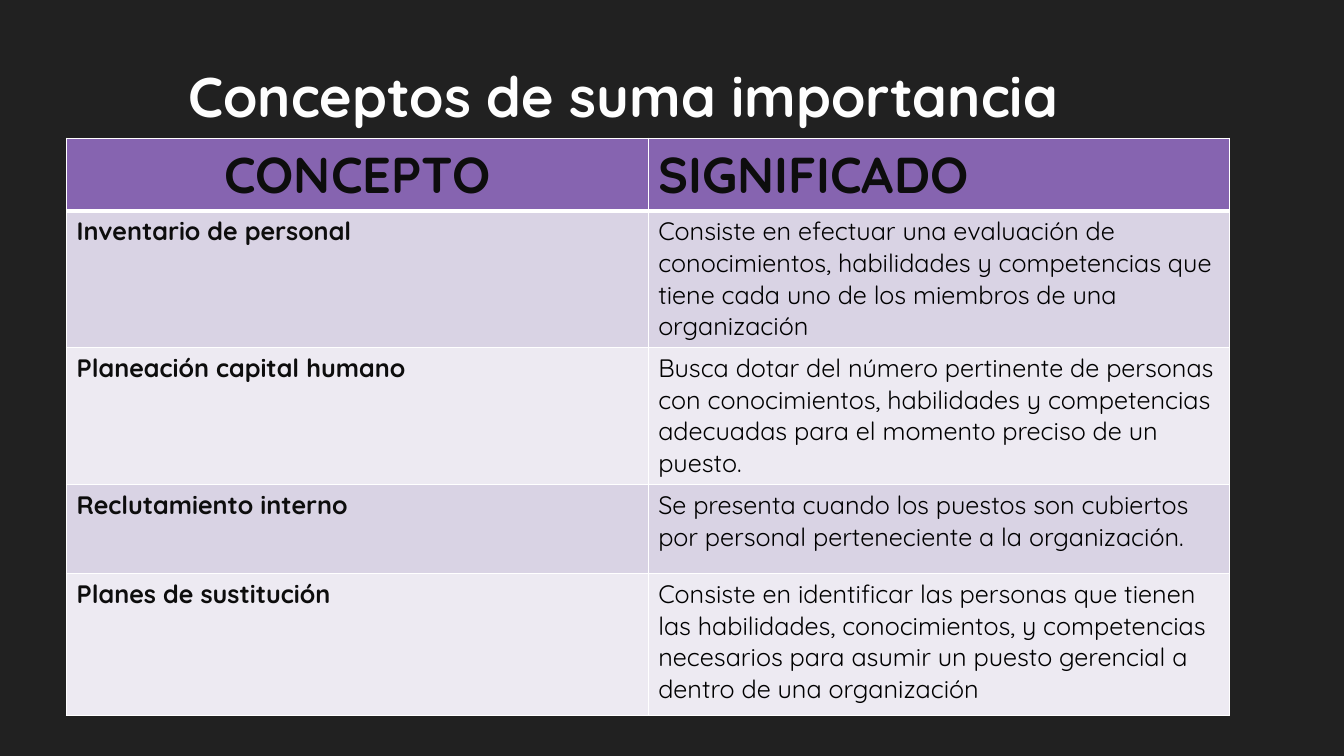
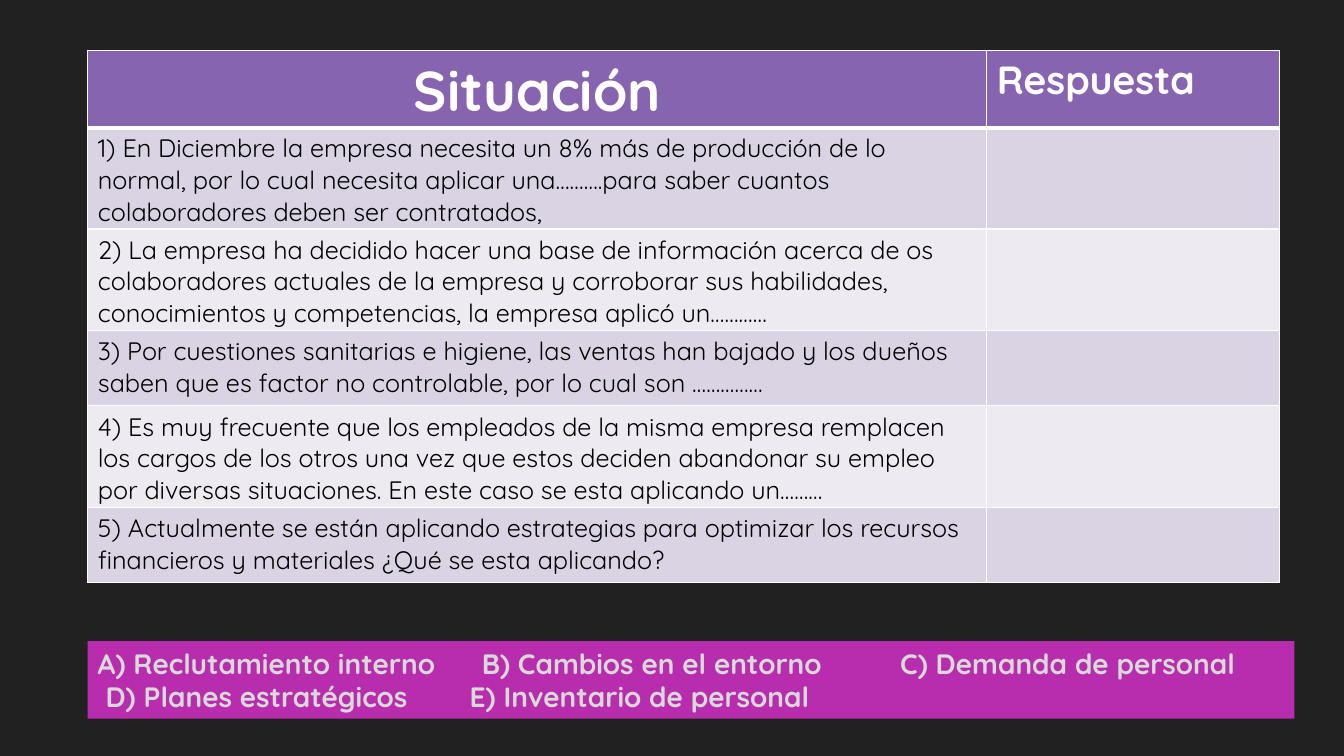
import pptx
import pptx.util
import pptx.dml.color
import pptx.enum.shapes
import pptx.enum.text
import pptx.oxml.ns
import lxml.etree

RGB = pptx.dml.color.RGBColor
ALIGN = pptx.enum.text.PP_ALIGN
ANCHOR = pptx.enum.text.MSO_ANCHOR
qn = pptx.oxml.ns.qn

DARK = RGB(0x21, 0x21, 0x21)
PURPLE = RGB(0x86, 0x64, 0xB0)
BANDS = (RGB(0xD9, 0xD3, 0xE4), RGB(0xED, 0xEA, 0xF2))
MAGENTA = RGB(0xB8, 0x2D, 0xAD)
WHITE = RGB(0xFF, 0xFF, 0xFF)
CREAM = RGB(0xFE, 0xFE, 0xFE)
GREY = RGB(0xD9, 0xD9, 0xD9)
INK = RGB(0x0D, 0x0D, 0x0D)
BLACK = RGB(0, 0, 0)
FONT = "Quicksand"
WIDTH = pptx.util.Inches(13.33)
HEIGHT = pptx.util.Inches(7.5)
THIN, THICK = 1, 3

TERMS = [
    ("CONCEPTO", "SIGNIFICADO"),
    ("Inventario de personal",
     "Consiste en efectuar una evaluación de conocimientos, habilidades y "
     "competencias que tiene cada uno de los miembros de una organización"),
    ("Planeación capital humano",
     "Busca dotar del número pertinente de personas con conocimientos, "
     "habilidades y competencias adecuadas para el momento preciso de un puesto."),
    ("Reclutamiento interno",
     "Se presenta cuando los puestos son cubiertos por personal "
     "perteneciente a la organización."),
    ("Planes de sustitución",
     "Consiste en identificar las personas que tienen las habilidades, "
     "conocimientos, y competencias necesarios para asumir un puesto gerencial "
     "a dentro de una organización"),
]
CASES = [
    ("Situación", "Respuesta"),
    ("1) En Diciembre la empresa necesita un 8% más de producción de lo normal, "
     "por lo cual necesita aplicar una……….para saber cuantos colaboradores "
     "deben ser contratados,", ""),
    ("2) La empresa ha decidido hacer una base de información acerca de os "
     "colaboradores actuales de la empresa y corroborar sus habilidades, "
     "conocimientos y competencias, la empresa aplicó un…………", ""),
    ("3) Por cuestiones sanitarias e higiene, las ventas han bajado y los dueños "
     "saben que es factor no controlable, por lo cual son ……………", ""),
    ("4) Es muy frecuente que los empleados de la misma empresa remplacen los "
     "cargos de los otros una vez que estos deciden abandonar su empleo por "
     "diversas situaciones. En este caso se esta aplicando un………", ""),
    ("5) Actualmente se están aplicando estrategias para optimizar los recursos "
     "financieros y materiales ¿Qué se esta aplicando?", ""),
]
CHOICES = [
    (0, (3.81, 7.96), ("A) Reclutamiento interno", "B) Cambios en el entorno",
                       "C) Demanda de personal")),
    (0.08, (3.61,), ("D) Planes estratégicos", "E) Inventario de personal")),
]


def across(share):
    return int(WIDTH * share / 100)


def down(share):
    return int(HEIGHT * share / 100)


def place(left, top, width, height):
    return across(left), down(top), across(width), down(height)


def style(frame, size, color, bold):
    for para in frame.paragraphs:
        for run in para.runs:
            font = run.font
            font.size = pptx.util.Pt(size)
            font.name = FONT
            font.bold = bold
            font.color.rgb = color


def add_slide(deck):
    slide = deck.slides.add_slide(deck.slide_layouts[6])
    slide.background.fill.solid()
    slide.background.fill.fore_color.rgb = DARK
    return slide


def add_glow(run):
    props = run.font._element
    effects = lxml.etree.Element(qn("a:effectLst"))
    shade = lxml.etree.SubElement(effects, qn("a:outerShdw"),
                                  blurRad="38100", dist="38100", dir="2700000")
    black = lxml.etree.SubElement(shade, qn("a:srgbClr"), val=str(BLACK))
    lxml.etree.SubElement(black, qn("a:alpha"), val="43000")
    props.find(qn("a:latin")).addprevious(effects)


def add_title(slide, text, *box):
    frame = slide.shapes.add_textbox(*place(*box)).text_frame
    frame.word_wrap = True
    frame.vertical_anchor = ANCHOR.BOTTOM
    frame.text = text
    style(frame, 40, CREAM, True)
    add_glow(frame.paragraphs[0].runs[0])


def add_edges(cell, top, base):
    props = cell._tc.get_or_add_tcPr()
    sides = (("L", THIN), ("R", THIN), ("T", top), ("B", base))
    for spot, (side, width) in enumerate(sides):
        line = lxml.etree.Element(qn("a:ln" + side), w=str(pptx.util.Pt(width)))
        fill = lxml.etree.SubElement(line, qn("a:solidFill"))
        lxml.etree.SubElement(fill, qn("a:srgbClr"), val=str(WHITE))
        props.insert(spot, line)


def add_grid(slide, left, top, widths, heights, rows, heads, looks):
    box = place(left, top, sum(widths), sum(heights))
    grid = slide.shapes.add_table(len(rows), len(widths), *box).table
    for col, width in zip(grid.columns, widths):
        col.width = across(width)
    for row, height in zip(grid.rows, heights):
        row.height = down(height)
    for r, texts in enumerate(rows):
        for c, text in enumerate(texts):
            cell = grid.cell(r, c)
            cell.fill.solid()
            cell.fill.fore_color.rgb = BANDS[(r - 1) % 2] if r else PURPLE
            add_edges(cell, THICK if r == 1 else THIN, THIN if r else THICK)
            cell.text_frame.text = text
            style(cell.text_frame, *(looks if r else heads)[c])
    grid.cell(0, 0).text_frame.paragraphs[0].alignment = ALIGN.CENTER


def add_stops(para, indent, stops):
    props = para._p.get_or_add_pPr()
    props.set("marL", str(pptx.util.Inches(indent)))
    tabs = lxml.etree.SubElement(props, qn("a:tabLst"))
    for stop in stops:
        lxml.etree.SubElement(tabs, qn("a:tab"),
                              pos=str(pptx.util.Inches(stop)), algn="l")


def add_bar(slide, lines, *box):
    bar = slide.shapes.add_shape(pptx.enum.shapes.MSO_SHAPE.RECTANGLE, *place(*box))
    bar.shadow.inherit = False
    bar.fill.solid()
    bar.fill.fore_color.rgb = MAGENTA
    bar.line.fill.background()
    frame = bar.text_frame
    frame.word_wrap = True
    frame.vertical_anchor = ANCHOR.TOP
    frame.text = "\n".join("\t".join(parts) for _, _, parts in lines)
    for para, (indent, stops, _) in zip(frame.paragraphs, lines):
        para.alignment = ALIGN.LEFT
        add_stops(para, indent, stops)
    style(frame, 20, GREY, True)


def main():
    deck = pptx.Presentation()
    deck.slide_width, deck.slide_height = WIDTH, HEIGHT

    slide = add_slide(deck)
    add_title(slide, "Conceptos de suma importancia", 13.28, 3.6, 86.72, 14.13)
    add_grid(slide, 4.95, 18.27, (43.28, 43.28), (9.6, 18.1, 18.1, 11.8, 18.8),
             TERMS, [(36, INK, True)] * 2, [(18, INK, True), (18, BLACK, False)])

    slide = add_slide(deck)
    add_grid(slide, 6.53, 6.67, (66.9, 21.75), (10, 13.4, 13.4, 10, 13.4, 10),
             CASES, [(40, WHITE, True), (28, WHITE, True)], [(18, BLACK, False)] * 2)
    add_bar(slide, CHOICES, 6.53, 84.8, 89.78, 10.27)

    deck.save("out.pptx")


if __name__ == "__main__":
    main()
